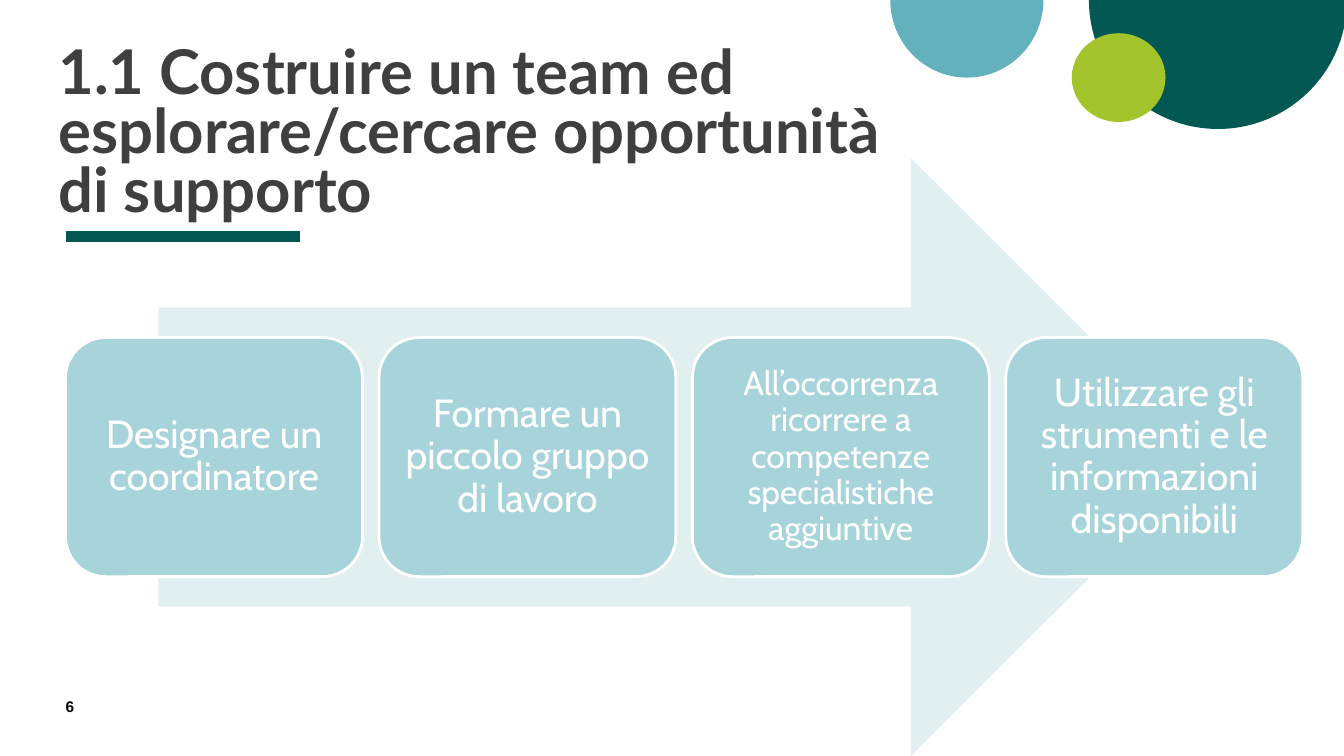
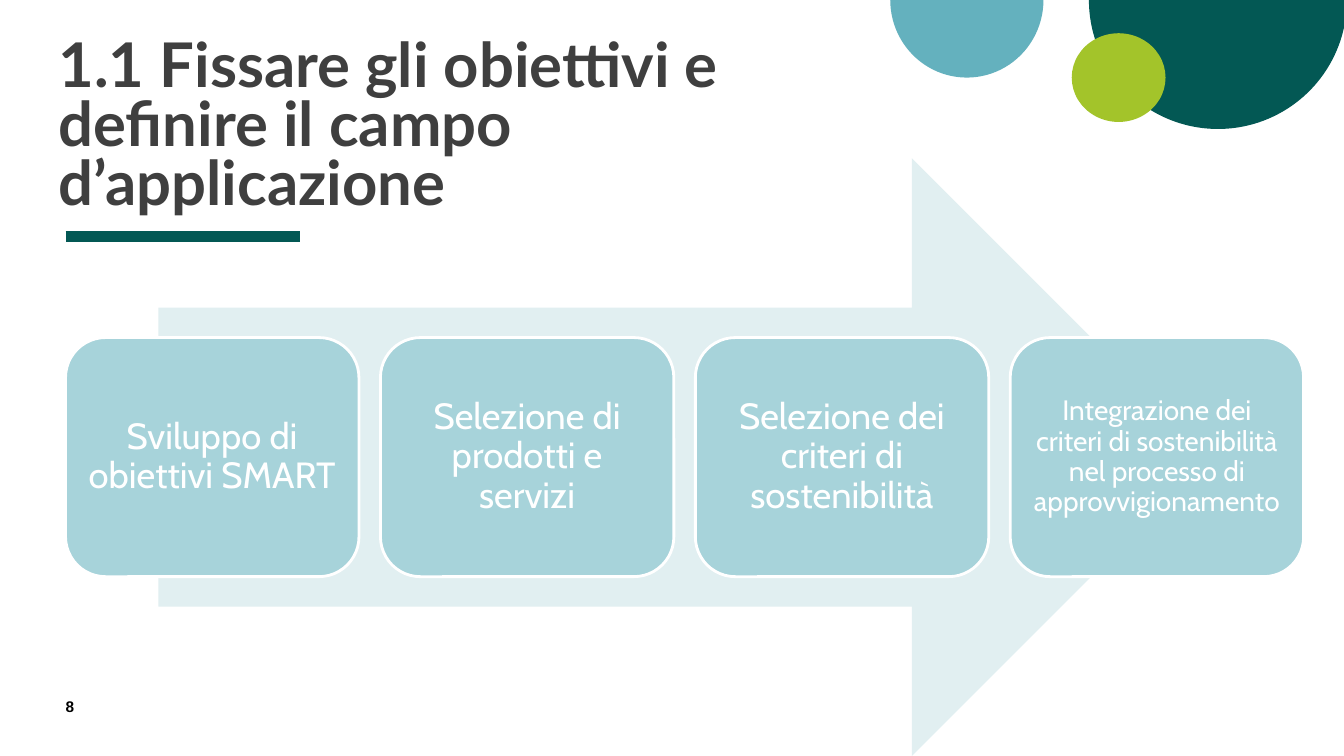
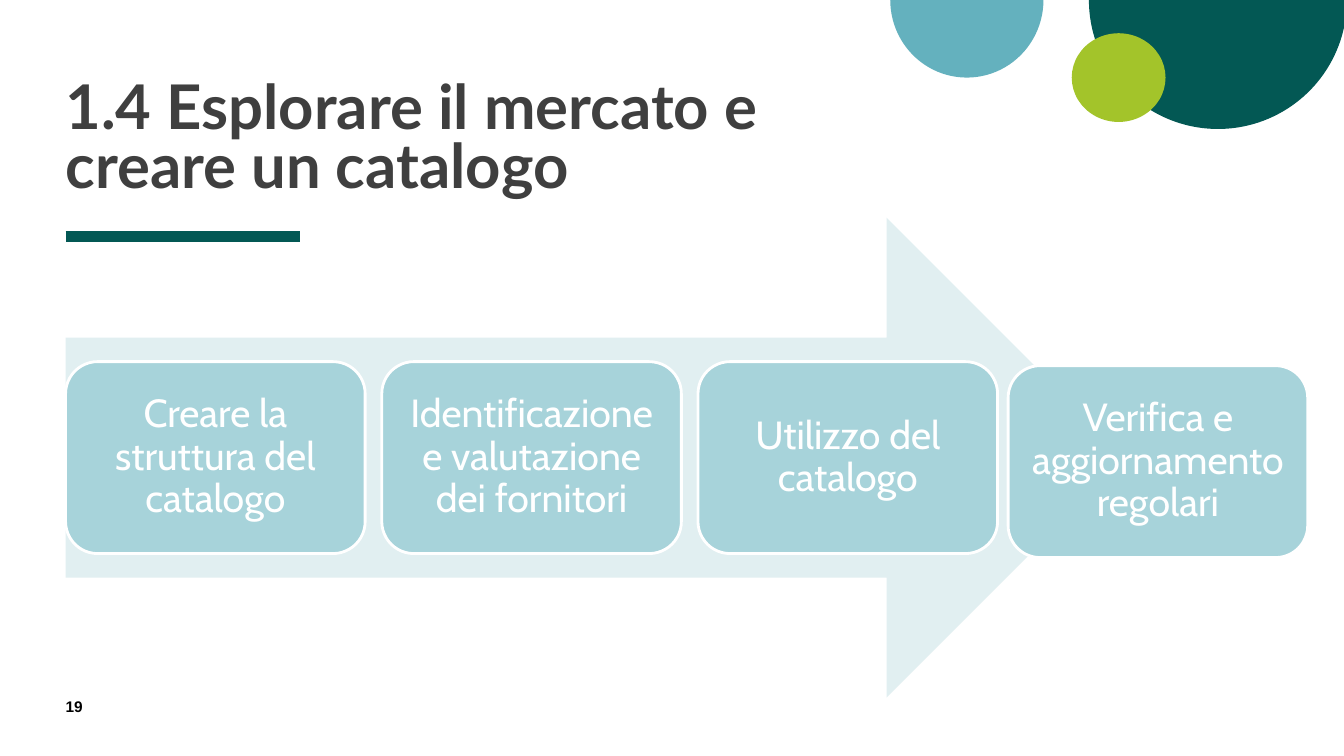
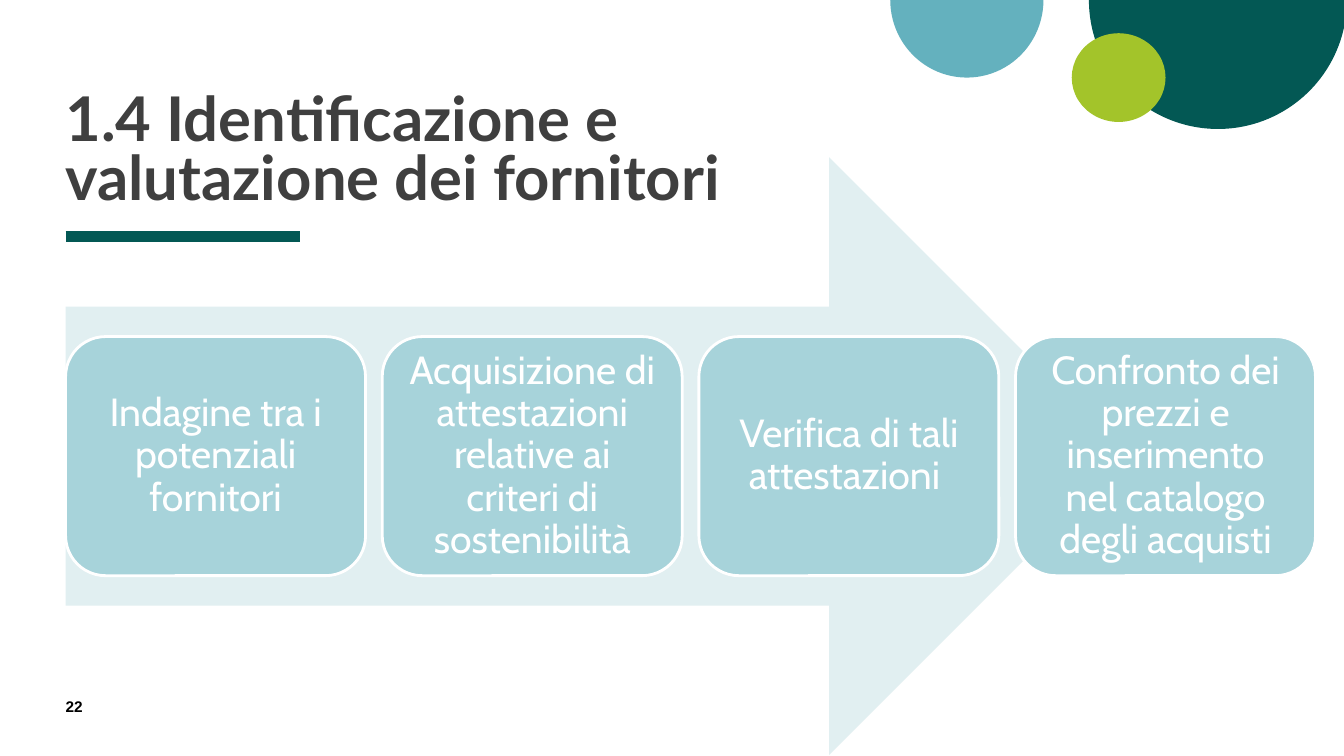
from dataclasses import dataclass

import lxml.etree
import pptx
import pptx.dml.color
import pptx.enum.shapes
import pptx.enum.text
import pptx.oxml.ns
import pptx.util

SHAPE = pptx.enum.shapes.MSO_SHAPE
ANCHOR = pptx.enum.text.MSO_ANCHOR
ALIGN = pptx.enum.text.PP_ALIGN

SLIDE_WIDTH = pptx.util.Inches(13.33)
SLIDE_HEIGHT = pptx.util.Inches(7.5)
MARGIN = 4.88  # all positions and sizes are percentages of the slide

DARK_GREEN, TEAL, LIME = "035854", "64B1BE", "A3C42A"
ARROW_TINT, CARD_BLUE = "E1EFF1", "A7D3DA"
TITLE_GREY, BLACK, WHITE = "3F3F3F", "000000", "FFFFFF"


@dataclass
class Box:
    left: float
    top: float
    width: float
    height: float

    def inner_box(self, left, top, width, height):
        """Return an inner box given as shares of this one."""
        return Box(self.left + left * self.width, self.top + top * self.height,
                   width * self.width, height * self.height)

    def lengths(self):
        return (across(self.left), down(self.top),
                across(self.width), down(self.height))


@dataclass
class Process:
    number: int
    title: str
    title_box: Box
    area: Box
    steps: list
    arrow_start: float = 0
    card_share: float = 0.24
    sizes: tuple = (28, 28, 28, 28)
    last_shift: tuple = (0, 0)


def across(percent):
    return round(SLIDE_WIDTH * percent / 100)


def down(percent):
    return round(SLIDE_HEIGHT * percent / 100)


def colour(value):
    return pptx.dml.color.RGBColor.from_string(value)


def add_filled(page, kind, box, fill, adjustments=(), outline=None):
    shape = page.shapes.add_shape(kind, *box.lengths())
    shape.shadow.inherit = False
    shape.fill.solid()
    shape.fill.fore_color.rgb = colour(fill)
    if outline:
        shape.line.color.rgb = colour(outline)
        shape.line.width = pptx.util.Pt(2)
    else:
        shape.line.fill.background()
    for index, value in enumerate(adjustments):
        shape.adjustments[index] = value
    return shape


def write(shape, text, font, size, ink, bold=False, inset=0,
          anchor=ANCHOR.TOP, align=ALIGN.LEFT, spacing=1.0):
    frame = shape.text_frame
    frame.word_wrap = True
    frame.vertical_anchor = anchor
    frame.margin_left = frame.margin_right = pptx.util.Inches(inset)
    frame.margin_top = frame.margin_bottom = pptx.util.Inches(inset)
    para = frame.paragraphs[0]
    para.text = text
    para.alignment = align
    para.line_spacing = spacing
    para.font.name = font
    para.font.size = pptx.util.Pt(size)
    para.font.bold = bold
    para.font.color.rgb = colour(ink)


def add_decoration(page):
    add_filled(page, SHAPE.PIE, Box(81.02, -17.07, 19.2, 34.13),
               DARK_GREEN, (0, 107.96))
    add_filled(page, SHAPE.PIE, Box(66.24, -10.27, 11.4, 20.53),
               TEAL, (0, 108.52))
    add_filled(page, SHAPE.OVAL, Box(79.74, 4.4, 6.98, 11.73), LIME)
    rule = page.shapes.add_connector(
        pptx.enum.shapes.MSO_CONNECTOR.STRAIGHT,
        across(MARGIN), down(31.33), across(22.36), down(31.33))
    rule.line.color.rgb = colour(DARK_GREEN)
    rule.line.width = pptx.util.Pt(8)
    lxml.etree.SubElement(rule._element.spPr,
                          pptx.oxml.ns.qn("a:effectLst"))


def add_title(page, box, text):
    write(page.shapes.add_textbox(*box.lengths()), text, "Lato", 44,
          TITLE_GREY, bold=True, anchor=ANCHOR.BOTTOM, spacing=0.8)


def add_page_number(page, number):
    box = Box(MARGIN, 92.27, 4.28, 3.6)
    write(page.shapes.add_textbox(*box.lengths()), str(number), "Arial", 11,
          BLACK, bold=True)


def add_process(page, process):
    """Draw the arrow and, across its middle, a row of evenly spaced cards."""
    area, share = process.area, process.card_share
    add_filled(page, SHAPE.RIGHT_ARROW,
               area.inner_box(process.arrow_start, 0, 0.85, 1),
               ARROW_TINT, (0.5, 0.5))
    count = len(process.steps)
    pitch = (1 - share) / (count - 1)
    for index, (step, size) in enumerate(zip(process.steps, process.sizes)):
        box = area.inner_box(index * pitch, 0.3, share, 0.4)
        if index == count - 1:
            box.left += process.last_shift[0]
            box.top += process.last_shift[1]
        card = add_filled(page, SHAPE.ROUNDED_RECTANGLE, box, CARD_BLUE,
                          (0.167,), outline=WHITE)
        write(card, step, "Cabin", size, WHITE, inset=0.11,
              anchor=ANCHOR.MIDDLE, align=ALIGN.CENTER, spacing=0.9)


def add_process_slide(deck, process):
    page = deck.slides.add_slide(deck.slide_layouts[6])
    add_decoration(page)
    add_title(page, process.title_box, process.title)
    add_page_number(page, process.number)
    add_process(page, process)


PROCESSES = [
    Process(
        6, "1.1 Costruire un team ed esplorare/cercare opportunità di supporto",
        Box(4.35, 2.27, 65.42, 27.47), Box(MARGIN, 20.93, 92.05, 79.07),
        ["Designare un coordinatore",
         "Formare un piccolo gruppo di lavoro",
         "All’occorrenza ricorrere a competenze specialistiche aggiuntive",
         "Utilizzare gli strumenti e le informazioni disponibili"],
        arrow_start=0.075, sizes=(28, 28, 24, 28)),
    Process(
        8, "1.1 Fissare gli obiettivi e definire il campo d’applicazione",
        Box(4.35, 5.6, 55.66, 23.2), Box(MARGIN, 20.93, 92.12, 79.07),
        ["Sviluppo di obiettivi SMART",
         "Selezione di prodotti e servizi",
         "Selezione dei criteri di sostenibilità",
         "Integrazione dei criteri di sostenibilità nel processo di "
         "approvvigionamento"],
        arrow_start=0.075, card_share=0.237, sizes=(26, 26, 26, 20)),
    Process(
        19, "1.4 Esplorare il mercato e creare un catalogo",
        Box(MARGIN, 3.33, 55.66, 23.2), Box(MARGIN, 28.8, 92.87, 63.47),
        ["Creare la struttura del catalogo",
         "Identificazione e valutazione dei fornitori",
         "Utilizzo del catalogo",
         "Verifica e aggiornamento regolari"],
        last_shift=(-0.45, 0.53)),
    Process(
        22, "1.4 Identificazione e valutazione dei fornitori",
        Box(MARGIN, 4.93, 55.66, 23.2), Box(MARGIN, 20.8, 93, 79.07),
        ["Indagine tra i potenziali fornitori",
         "Acquisizione di attestazioni relative ai criteri di sostenibilità",
         "Verifica di tali attestazioni ",
         "Confronto dei prezzi e inserimento nel catalogo degli acquisti"]),
]


def main():
    deck = pptx.Presentation()
    deck.slide_width = SLIDE_WIDTH
    deck.slide_height = SLIDE_HEIGHT
    for process in PROCESSES:
        add_process_slide(deck, process)
    deck.save("out.pptx")


if __name__ == "__main__":
    main()
